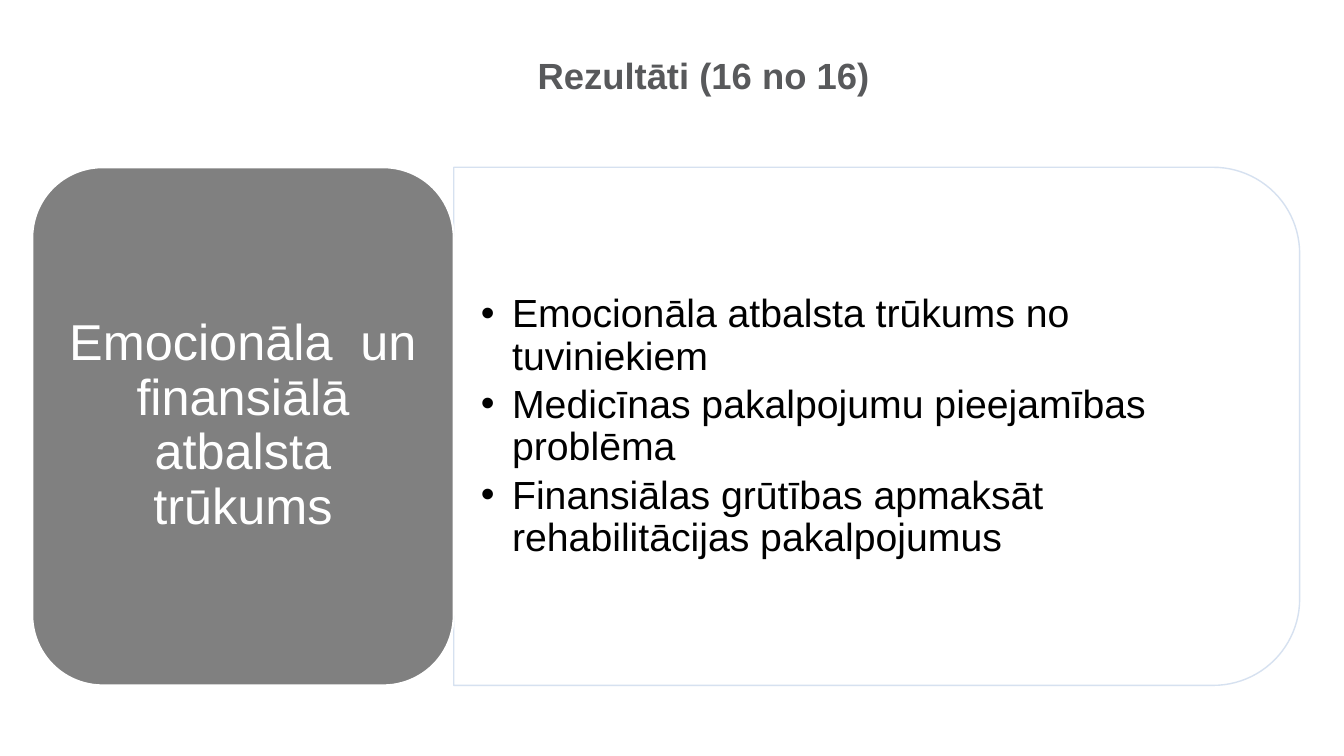
import pptx
import pptx.util
import pptx.dml.color
import pptx.enum.shapes
import pptx.enum.text
from lxml import etree

TITLE = "Rezultāti (16 no 16)"
THEME = "Emocionāla  un finansiālā atbalsta trūkums"
FINDINGS = [
    "Emocionāla atbalsta trūkums no tuviniekiem",
    "Medicīnas pakalpojumu pieejamības problēma",
    "Finansiālas grūtības apmaksāt rehabilitācijas pakalpojumus",
]

WIDTH, HEIGHT = 13.33, 7.5
MARGIN = 0.32
TOP, BAND = 1.66, 5.14
THEME_WIDTH = 4.18
PANEL_LEFT = MARGIN + THEME_WIDTH
PANEL_WIDTH = 8.39
INDENT = 0.31

Inches, Pt = pptx.util.Inches, pptx.util.Pt
Shape = pptx.enum.shapes.MSO_SHAPE
Align = pptx.enum.text.PP_ALIGN
Anchor = pptx.enum.text.MSO_ANCHOR


def color(value):
    return pptx.dml.color.RGBColor.from_string(value)


def make_translucent(fill, percent):
    for tint in fill.iter(pptx.oxml.ns.qn("a:srgbClr")):
        etree.SubElement(tint, pptx.oxml.ns.qn("a:alpha"), val=str(percent * 1000))


def add_card(slide, kind, box, fill, line, line_width):
    card = slide.shapes.add_shape(kind, *map(Inches, box))
    card.shadow.inherit = False
    card.fill.solid()
    card.fill.fore_color.rgb = color(fill)
    card.line.color.rgb = color(line)
    card.line.width = Pt(line_width)
    return card


def write(frame, lines, size, ink, align, anchor, insets, bold=False, after=0, bullet=False):
    frame.word_wrap = True
    frame.vertical_anchor = anchor
    frame.margin_left = frame.margin_right = Inches(insets[0])
    frame.margin_top = frame.margin_bottom = Inches(insets[1])
    frame.text = "\n".join(lines)
    for paragraph in frame.paragraphs:
        paragraph.alignment = align
        paragraph.line_spacing = 0.9
        paragraph.space_after = Pt(after)
        if bullet:
            props = paragraph._p.get_or_add_pPr()
            props.set("marL", str(Inches(INDENT)))
            props.set("indent", str(-Inches(INDENT)))
            etree.SubElement(props, pptx.oxml.ns.qn("a:buFont"), typeface="Arial")
            etree.SubElement(props, pptx.oxml.ns.qn("a:buChar"), char="•")
        for run in paragraph.runs:
            run.font.name = "Arial"
            run.font.size = Pt(size)
            run.font.bold = bold
            run.font.color.rgb = color(ink)


def main():
    deck = pptx.Presentation()
    deck.slide_width, deck.slide_height = Inches(WIDTH), Inches(HEIGHT)
    slide = deck.slides.add_slide(deck.slide_layouts[6])

    heading = slide.shapes.add_textbox(*map(Inches, (1.23, 0.58, 11.5, 1.13)))
    write(heading.text_frame, [TITLE], 26, "58595B", Align.CENTER, Anchor.TOP, (0, 0), bold=True)

    turned = (PANEL_LEFT + (PANEL_WIDTH - BAND) / 2, TOP + (BAND - PANEL_WIDTH) / 2, BAND, PANEL_WIDTH)
    panel = add_card(slide, Shape.ROUND_2_SAME_RECTANGLE, turned, "FFFFFF", "D2DEEF", 1)
    panel.rotation = 90
    make_translucent(panel._element.spPr, 90)

    findings = slide.shapes.add_textbox(*map(Inches, (PANEL_LEFT, 1.91, 8.14, 4.65)))
    write(findings.text_frame, FINDINGS, 28, "000000", Align.LEFT, Anchor.MIDDLE,
          (0.27, 0.14), after=4.2, bullet=True)

    theme = add_card(slide, Shape.ROUNDED_RECTANGLE, (MARGIN, TOP, THEME_WIDTH, BAND),
                     "808080", "FFFFFF", 1.5)
    write(theme.text_frame, [THEME], 36, "FFFFFF", Align.CENTER, Anchor.MIDDLE, (0.15, 0.07))

    deck.save("out.pptx")


if __name__ == "__main__":
    main()
